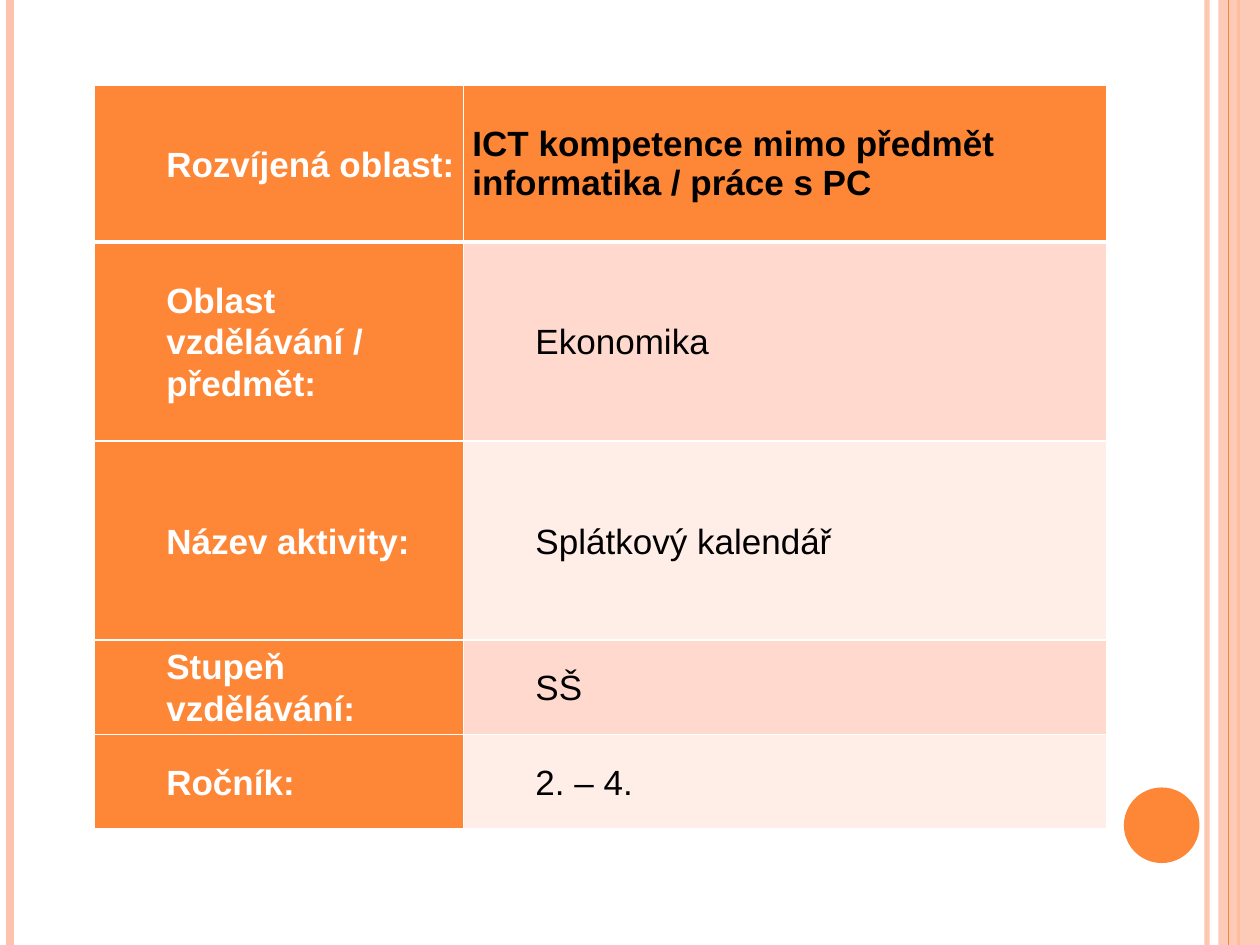
from dataclasses import dataclass

from lxml.etree import SubElement
from pptx import Presentation
from pptx.dml.color import RGBColor as RGB
from pptx.enum.shapes import MSO_CONNECTOR as CONNECTOR, MSO_SHAPE as SHAPE
from pptx.enum.text import MSO_ANCHOR as ANCHOR
from pptx.oxml.ns import qn
from pptx.util import Inches, Pt


@dataclass(frozen=True)
class Theme:
    """Colours, font and type size of the slide."""
    accent: str = "FE8637"
    pale: str = "FEC3AE"
    bands: tuple = ("FFD9CE", "FFEDE8")
    white: str = "FFFFFF"
    black: str = "000000"
    font: str = "Arial"
    size: int = 20


THEME = Theme()
COL_WIDTHS = (2.93, 5.1)
ROWS = (
    (1.24, "Rozvíjená oblast:", "ICT kompetence mimo předmět informatika / práce s PC"),
    (1.58, "Oblast vzdělávání / předmět:", "Ekonomika"),
    (1.58, "Název aktivity:", "Splátkový kalendář"),
    (0.75, "Stupeň vzdělávání:", "SŠ"),
    (0.75, "Ročník:", "2. – 4."),
)


def paint(fill, color, opacity=100):
    """Give a fill a solid colour and, if wanted, transparency."""
    fill.solid()
    fill.fore_color.rgb = RGB.from_string(color)
    if opacity < 100:
        clr = fill._xPr.find(f".//{qn('a:srgbClr')}")
        SubElement(clr, qn("a:alpha"), val=str(opacity * 1000))


def add_stripe(slide, x, color, width, opacity=100):
    """Draw a vertical line over the full height of the slide."""
    line = slide.shapes.add_connector(
        CONNECTOR.STRAIGHT, Inches(x), 0, Inches(x), Inches(7.5))
    paint(line.line.fill, color, opacity)
    line.line.width = Pt(width)
    SubElement(line._element.spPr, qn("a:effectLst"))


def add_block(slide, kind, x, y, w, h, color, opacity=100):
    """Draw a plain filled shape without outline."""
    sp = slide.shapes.add_shape(kind, Inches(x), Inches(y), Inches(w), Inches(h))
    sp.shadow.inherit = False
    paint(sp.fill, color, opacity)
    sp.line.fill.background()


def set_borders(cell, **widths):
    """Give the cell white borders of the widths named by side."""
    tc_pr = cell._tc.get_or_add_tcPr()
    for side, width in widths.items():
        ln = SubElement(tc_pr, qn(f"a:ln{side}"), w=str(Pt(width)))
        fill = SubElement(ln, qn("a:solidFill"))
        SubElement(fill, qn("a:srgbClr"), val=THEME.white)


def fill_cell(cell, text, color, back, bold, indent, spacing):
    """Write and format one table cell."""
    paint(cell.fill, back)
    cell.vertical_anchor = ANCHOR.MIDDLE
    cell.margin_left = cell.margin_right = Inches(0.07)
    cell.margin_top = cell.margin_bottom = 0
    p = cell.text_frame.paragraphs[0]
    p.text = text
    p.line_spacing = spacing
    p._p.get_or_add_pPr().set("marL", str(Inches(indent)))
    p.font.name, p.font.size, p.font.bold = THEME.font, Pt(THEME.size), bold
    p.font.color.rgb = RGB.from_string(color)


def add_activity_table(slide):
    """Add the table with a label and a value in each row."""
    heights = [row[0] for row in ROWS]
    table = slide.shapes.add_table(
        len(ROWS), len(COL_WIDTHS), Inches(0.75), Inches(0.68),
        Inches(sum(COL_WIDTHS)), Inches(sum(heights))).table
    for column, width in zip(table.columns, COL_WIDTHS):
        column.width = Inches(width)
    for i, (height, label, value) in enumerate(ROWS):
        table.rows[i].height = Inches(height)
        label_cell, value_cell = table.rows[i].cells
        for cell in (label_cell, value_cell):
            set_borders(cell, L=1, R=1, T=3 if i == 1 else 1, B=3 if i == 0 else 1)
        fill_cell(label_cell, label, THEME.white, THEME.accent, True, 0.5, 1.07)
        if i == 0:
            fill_cell(value_cell, value, THEME.black, THEME.accent, True, 0, 1.0)
        else:
            band = THEME.bands[(i - 1) % 2]
            fill_cell(value_cell, value, THEME.black, band, False, 0.5, 1.07)


def add_decoration(slide):
    """Draw the stripes at both edges and the round accent."""
    add_stripe(slide, 9.58, THEME.pale, 3, 93)
    add_stripe(slide, 0.08, THEME.pale, 4.5)
    add_stripe(slide, 9.83, THEME.accent, 1.5)
    add_block(slide, SHAPE.RECTANGLE, 9.67, 0, 0.33, 7.5, THEME.pale, 87)
    add_stripe(slide, 9.75, THEME.accent, 0.75)
    add_block(slide, SHAPE.OVAL, 8.92, 6.25, 0.6, 0.6, THEME.accent)


def main():
    """Build the slide and save it."""
    prs = Presentation()
    prs.slide_width, prs.slide_height = Inches(10), Inches(7.5)
    slide = prs.slides.add_slide(prs.slide_layouts[6])
    add_decoration(slide)
    add_activity_table(slide)
    prs.save("out.pptx")


if __name__ == "__main__":
    main()
